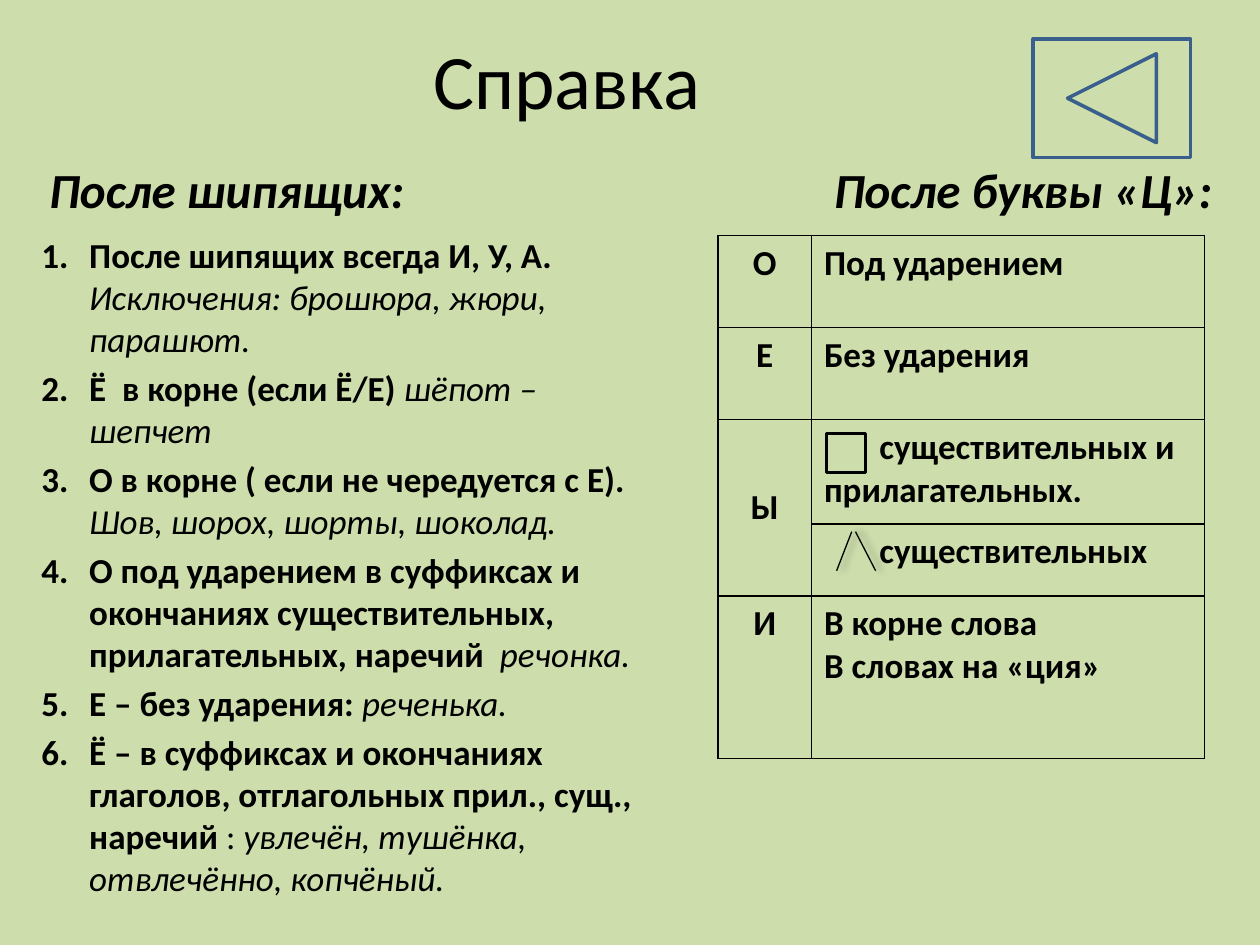
from lxml.etree import SubElement
from pptx import Presentation
from pptx.dml.color import RGBColor
from pptx.enum.shapes import MSO_CONNECTOR, MSO_SHAPE
from pptx.enum.text import MSO_ANCHOR, PP_ALIGN
from pptx.oxml import parse_xml
from pptx.oxml.ns import nsdecls, qn
from pptx.util import Inches, Pt

BLACK = RGBColor(0, 0, 0)
BLUE = RGBColor(0x3A, 0x5F, 0x8C)
GREEN = RGBColor(0xCD, 0xDD, 0xAC)

BOLD = {"bold": True}
ITALIC = {"italic": True}

RULES = [
    [("После шипящих всегда И, У, А. ", BOLD),
     ("Исключения: брошюра, жюри, парашют.", ITALIC)],
    [("Ё  в корне (если Ё/Е) ", BOLD), ("шёпот – шепчет", ITALIC)],
    [("О в корне ( если не чередуется с Е). ", BOLD),
     ("Шов, шорох, шорты, шоколад.", ITALIC)],
    [("О под ударением в суффиксах и окончаниях существительных, "
      "прилагательных, наречий  ", BOLD), ("речонка.", ITALIC)],
    [("Е – без ударения: ", BOLD), ("реченька.", ITALIC)],
    [("Ё – в суффиксах и окончаниях глаголов, отглагольных прил., сущ., "
      "наречий", BOLD), (" : ", {}),
     ("увлечён, тушёнка, отвлечённо, копчёный.", ITALIC)],
]

# letter, lines of the rule, first-line indent that leaves room for a sign
TABLE_ROWS = [
    ("О", ["Под ударением"], 0),
    ("Е", ["Без ударения"], 0),
    ("Ы", ["существительных и прилагательных."], 0.44),
    ("", ["существительных"], 0.44),
    ("И", ["В корне слова", "В словах на «ция»"], 0),
]
COL_WIDTHS = [0.74, 3.12]
ROW_HEIGHTS = [0.73, 0.73, 0.83, 0.57, 1.29]


def add_run(p, text, size, **formats):
    r = p.add_run()
    r.text = text
    r.font.color.rgb = BLACK
    for name, value in {"name": "Calibri", "size": Pt(size), **formats}.items():
        setattr(r.font, name, value)


def add_text_frame(slide, box, anchor=MSO_ANCHOR.TOP):
    tf = slide.shapes.add_textbox(*map(Inches, box)).text_frame
    tf.word_wrap = True
    tf.vertical_anchor = anchor
    return tf


def add_title(slide, box):
    p = add_text_frame(slide, box, MSO_ANCHOR.MIDDLE).paragraphs[0]
    p.alignment = PP_ALIGN.CENTER
    add_run(p, "Справка", 44)


def add_headings(slide, box, margin):
    """Two headings on one line, the second set flush right by a tab stop."""
    tf = add_text_frame(slide, box, MSO_ANCHOR.BOTTOM)
    tf.margin_left = Inches(margin)
    p = tf.paragraphs[0]
    tabs = SubElement(p._p.get_or_add_pPr(), qn("a:tabLst"))
    SubElement(tabs, qn("a:tab"), pos=str(Inches(9.62 - margin)), algn="r")
    add_run(p, "После шипящих:\tПосле буквы «Ц»:", 28, bold=True, italic=True)


def add_rules(slide, box):
    tf = add_text_frame(slide, box)
    for i, parts in enumerate(RULES):
        p = tf.add_paragraph() if i else tf.paragraphs[0]
        p.space_before = Pt(4)
        pPr = p._p.get_or_add_pPr()
        pPr.set("marL", str(Inches(0.38)))
        pPr.set("indent", str(Inches(-0.38)))
        SubElement(pPr, qn("a:buFont"), typeface="+mj-lt")
        SubElement(pPr, qn("a:buAutoNum"), type="arabicPeriod")
        for text, formats in parts:
            add_run(p, text, 20, **formats)


def style_cell(cell):
    cell.fill.background()
    tcPr = cell._tc.get_or_add_tcPr()
    for i, side in enumerate("LRTB"):
        tcPr.insert(i, parse_xml(
            f'<a:ln{side} {nsdecls("a")} w="{Pt(1)}"><a:solidFill>'
            f'<a:srgbClr val="{BLACK}"/></a:solidFill></a:ln{side}>'))


def fill_cell(cell, lines, indent=0, align=PP_ALIGN.LEFT):
    tf = cell.text_frame
    for i, line in enumerate(lines):
        p = tf.add_paragraph() if i else tf.paragraphs[0]
        p.alignment = align
        p._p.get_or_add_pPr().set("indent", str(Inches(indent)))
        add_run(p, line, 20, bold=True)


def add_rule_table(slide, left, top):
    box = (left, top, sum(COL_WIDTHS), sum(ROW_HEIGHTS))
    table = slide.shapes.add_table(
        len(ROW_HEIGHTS), len(COL_WIDTHS), *map(Inches, box)).table
    table.first_row = table.horz_banding = False
    for col, width in zip(table.columns, COL_WIDTHS):
        col.width = Inches(width)
    for row, height in zip(table.rows, ROW_HEIGHTS):
        row.height = Inches(height)
    for i, (letter, lines, indent) in enumerate(TABLE_ROWS):
        for cell in table.rows[i].cells:
            style_cell(cell)
        if letter:
            fill_cell(table.cell(i, 0), [letter], align=PP_ALIGN.CENTER)
        fill_cell(table.cell(i, 1), lines, indent)
    table.cell(2, 0).merge(table.cell(3, 0))
    table.cell(2, 0).vertical_anchor = MSO_ANCHOR.MIDDLE


def add_outline(slide, kind, box, color):
    sp = slide.shapes.add_shape(kind, *map(Inches, box))
    sp.shadow.inherit = False
    sp.fill.background()
    sp.line.color.rgb = color
    sp.line.width = Pt(2)


def add_suffix_sign(slide, left, top, width, height):
    """A caret of two slanted lines with a soft shadow."""
    bottom = top + height
    for foot, tip in ((width, 0.15), (0, 0.12)):
        points = (left + foot, bottom, left + tip if foot else left + tip, top)
        line = slide.shapes.add_connector(
            MSO_CONNECTOR.STRAIGHT, *map(Inches, points))
        line.line.color.rgb = BLACK
        line.line.width = Pt(0.75)
        line._element.spPr.append(parse_xml(
            f'<a:effectLst {nsdecls("a")}><a:outerShdw blurRad="{Pt(4)}" '
            f'dist="{Pt(3)}" dir="0"><a:srgbClr val="{BLACK}">'
            '<a:alpha val="40000"/></a:srgbClr></a:outerShdw></a:effectLst>'))


def main():
    prs = Presentation()
    prs.slide_width, prs.slide_height = Inches(10), Inches(7.5)
    slide = prs.slides.add_slide(prs.slide_layouts[6])
    slide.background.fill.solid()
    slide.background.fill.fore_color.rgb = GREEN

    add_title(slide, (0, 0, 9, 1.25))
    add_rules(slide, (0.23, 1.8, 5, 5.52))
    add_outline(slide, MSO_SHAPE.ACTION_BUTTON_BACK_OR_PREVIOUS,
                (8.2, 0.31, 1.25, 0.94), BLUE)
    add_rule_table(slide, 5.7, 1.87)
    add_outline(slide, MSO_SHAPE.RECTANGLE, (6.56, 3.44, 0.31, 0.31), BLACK)
    add_suffix_sign(slide, 6.64, 4.22, 0.31, 0.31)
    add_headings(slide, (0, 1.09, 10.08, 0.69), 0.39)
    prs.save("out.pptx")


if __name__ == "__main__":
    main()
